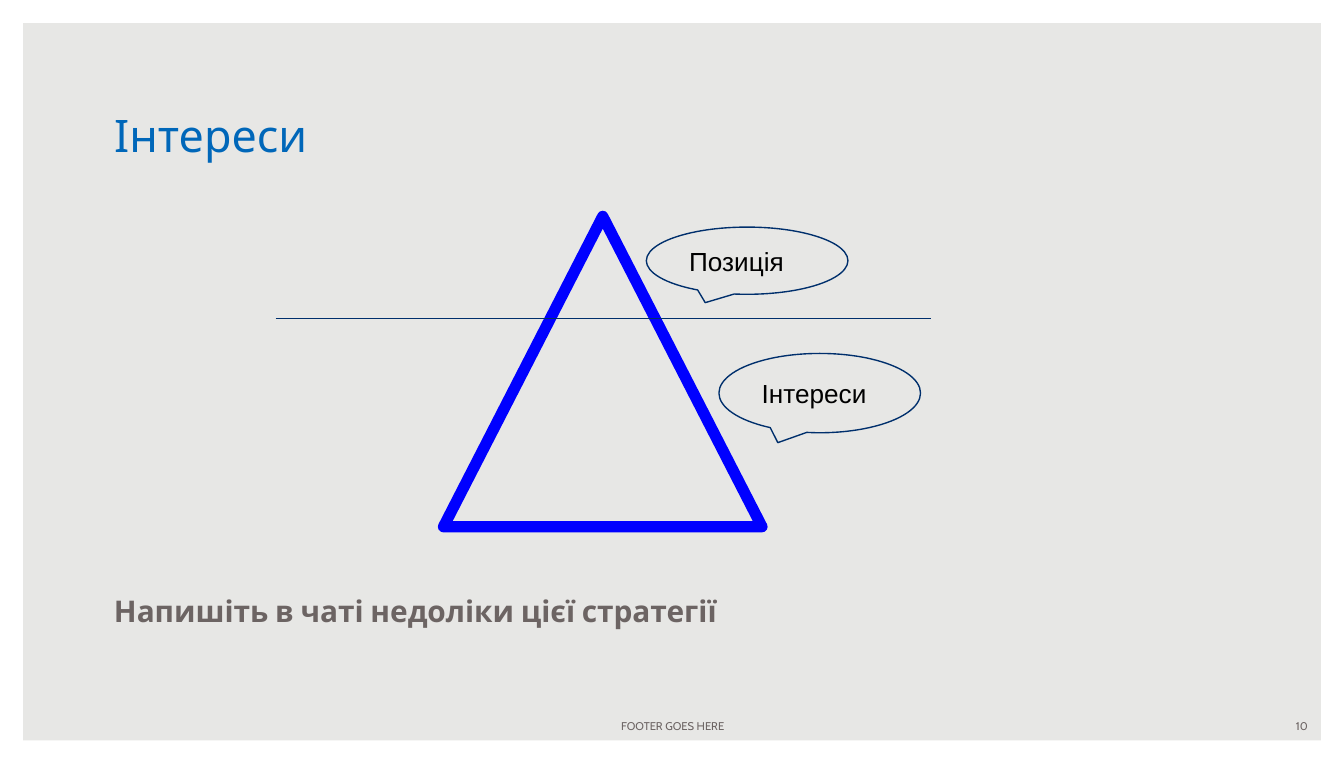
from dataclasses import dataclass

from lxml import etree
from pptx import Presentation
from pptx.dml.color import RGBColor
from pptx.enum.shapes import MSO_CONNECTOR, MSO_SHAPE
from pptx.enum.text import MSO_ANCHOR, MSO_AUTO_SIZE, PP_ALIGN
from pptx.oxml.ns import qn
from pptx.util import Emu, Pt

PX = 9144  # 100 px to the inch
TITLE_ONLY = 5
LEFT, CENTER, RIGHT = PP_ALIGN.LEFT, PP_ALIGN.CENTER, PP_ALIGN.RIGHT
MIDDLE, BOTTOM = MSO_ANCHOR.MIDDLE, MSO_ANCHOR.BOTTOM
COLORS = {
    "background": "E7E7E5",
    "frame": "FFFFFF",
    "title": "0067B9",
    "text": "6C6463",
    "iceberg": "0000FF",
    "navy": "002F6C",
    "black": "000000",
}


@dataclass(frozen=True)
class Box:
    x: int
    y: int
    w: int
    h: int

    def emu(self) -> tuple:
        return tuple(Emu(v * PX) for v in (self.x, self.y, self.w, self.h))


@dataclass(frozen=True)
class Label:
    text: str
    box: Box
    size: int
    align: PP_ALIGN = LEFT
    bold: bool = False


@dataclass(frozen=True)
class Callout:
    text: str
    box: Box


LABELS = [
    Label("FOOTER GOES HERE", Box(342, 530, 317, 20), 6, CENTER),
    Label("10", Box(750, 530, 233, 20), 6, RIGHT),
    Label("Напишіть в чаті недоліки цієї стратегії", Box(75, 435, 850, 38), 16, bold=True),
]
CALLOUTS = [
    Callout("Інтереси", Box(535, 263, 150, 59)),
    Callout("Позиція", Box(481, 169, 150, 50)),
]


def rgb(name: str) -> RGBColor:
    return RGBColor.from_string(COLORS[name])


def write(tf, text: str, *, size: int, color: str, font: str = "Cabin", align=LEFT,
          anchor=MIDDLE, bold: bool = False, inset_y: int = 5) -> None:
    tf.word_wrap = True
    tf.auto_size = MSO_AUTO_SIZE.NONE
    tf.vertical_anchor = anchor
    tf.margin_left = tf.margin_right = Emu(10 * PX)
    tf.margin_top = tf.margin_bottom = Emu(inset_y * PX)
    p = tf.paragraphs[0]
    p.alignment = align
    r = p.add_run()
    r.text = text
    r.font.name = font
    r.font.size = Pt(size)
    r.font.bold = bold
    r.font.color.rgb = rgb(color)


def add_outline(s, kind, box: Box, color: str, width: float):
    """Add an unfilled preset shape."""
    sp = s.shapes.add_shape(kind, *box.emu())
    sp.shadow.inherit = False
    sp.fill.background()
    sp.line.color.rgb = rgb(color)
    sp.line.width = Pt(width)
    return sp


def add_frame(s, box: Box) -> None:
    sp = s.shapes.add_shape(MSO_SHAPE.FRAME, *box.emu())
    sp.shadow.inherit = False
    sp.adjustments[0] = 0.03
    sp.fill.solid()
    sp.fill.fore_color.rgb = rgb("frame")
    sp.line.fill.background()


def add_label(s, label: Label) -> None:
    sp = s.shapes.add_textbox(*label.box.emu())
    write(sp.text_frame, label.text, size=label.size, color="text",
          align=label.align, bold=label.bold)


def add_waterline(s, x1: int, x2: int, y: int) -> None:
    line = s.shapes.add_connector(MSO_CONNECTOR.STRAIGHT, *(Emu(v * PX) for v in (x1, y, x2, y)))
    line.line.color.rgb = rgb("navy")
    line.line.width = Pt(0.75)
    etree.SubElement(line._element.spPr, qn("a:effectLst"))


def add_callout(s, callout: Callout) -> None:
    sp = add_outline(s, MSO_SHAPE.OVAL_CALLOUT, callout.box, "navy", 0.75)
    sp.adjustments[0] = -0.208
    sp.adjustments[1] = 0.625
    write(sp.text_frame, callout.text, size=14, color="black", font="Arial", inset_y=10)


def main() -> None:
    prs = Presentation()
    prs.slide_width, prs.slide_height = Emu(1000 * PX), Emu(567 * PX)
    s = prs.slides.add_slide(prs.slide_layouts[TITLE_ONLY])
    s.background.fill.solid()
    s.background.fill.fore_color.rgb = rgb("background")

    title = s.shapes.title
    title.left, title.top, title.width, title.height = Box(75, 75, 850, 50).emu()
    write(title.text_frame, "Інтереси", size=24, color="title", anchor=BOTTOM)

    add_frame(s, Box(0, 0, 1000, 568))
    for label in LABELS:
        add_label(s, label)
    add_outline(s, MSO_SHAPE.ISOSCELES_TRIANGLE, Box(330, 161, 237, 231), "iceberg", 6)
    add_waterline(s, 205, 693, 237)
    for callout in CALLOUTS:
        add_callout(s, callout)
    prs.save("out.pptx")


if __name__ == "__main__":
    main()
